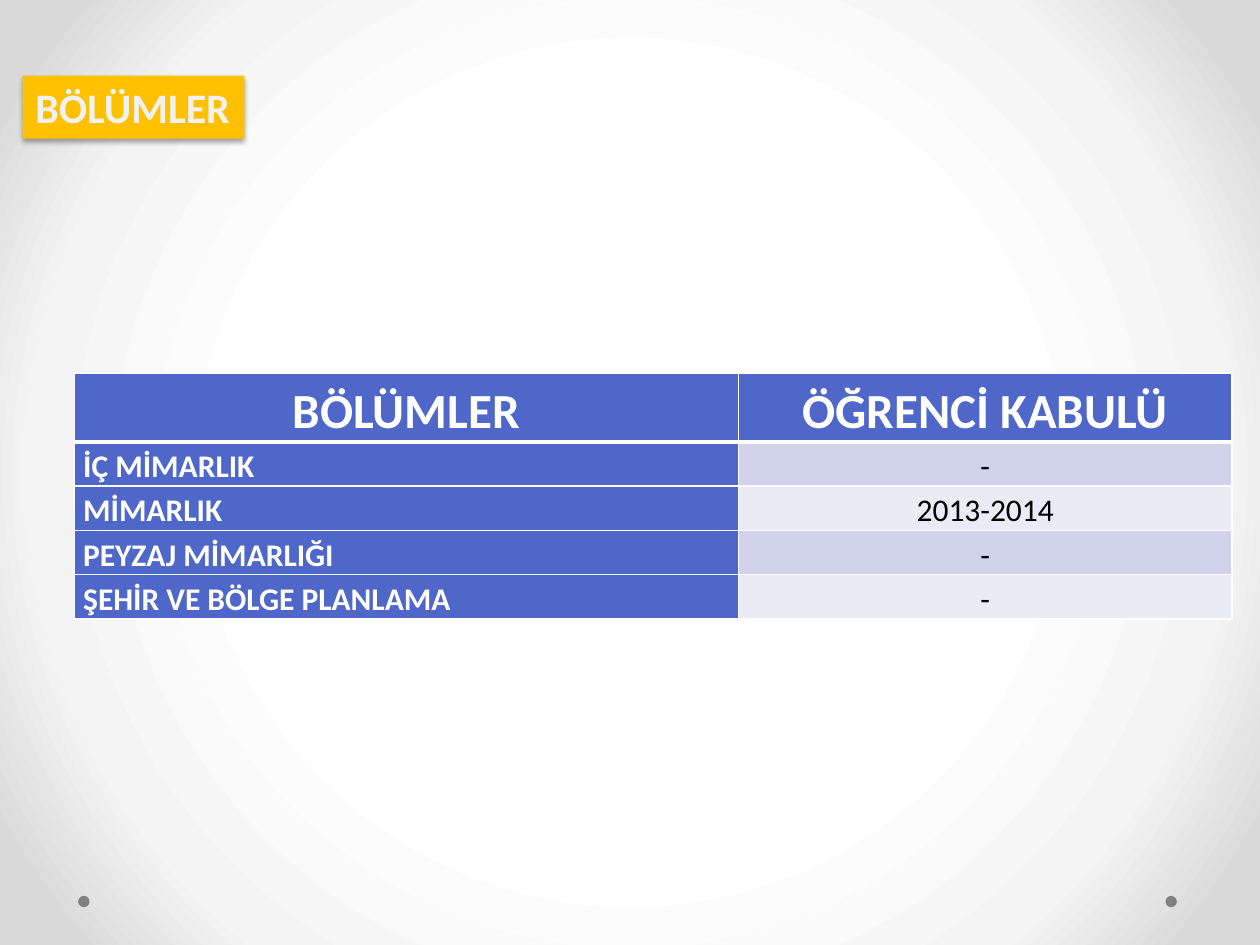
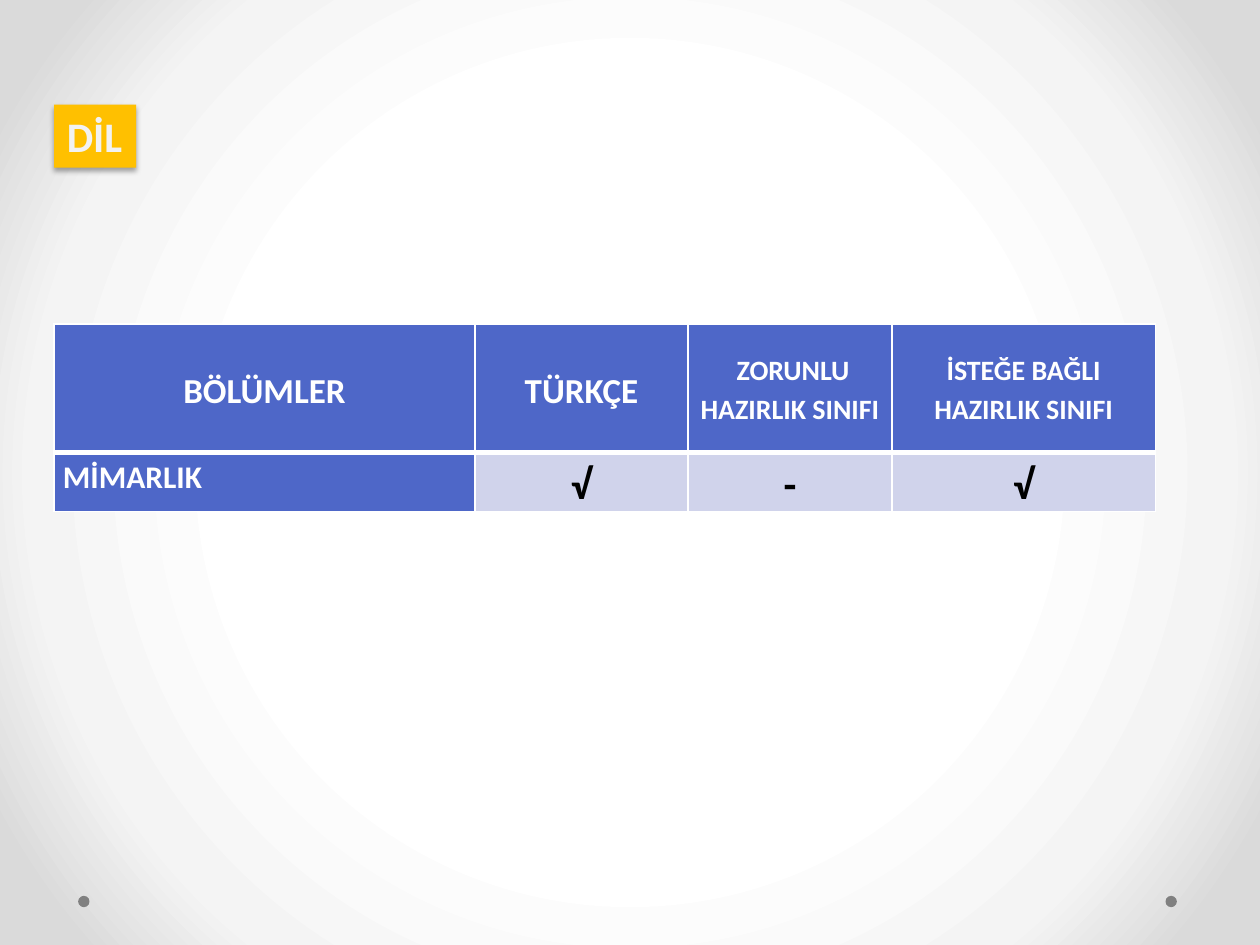
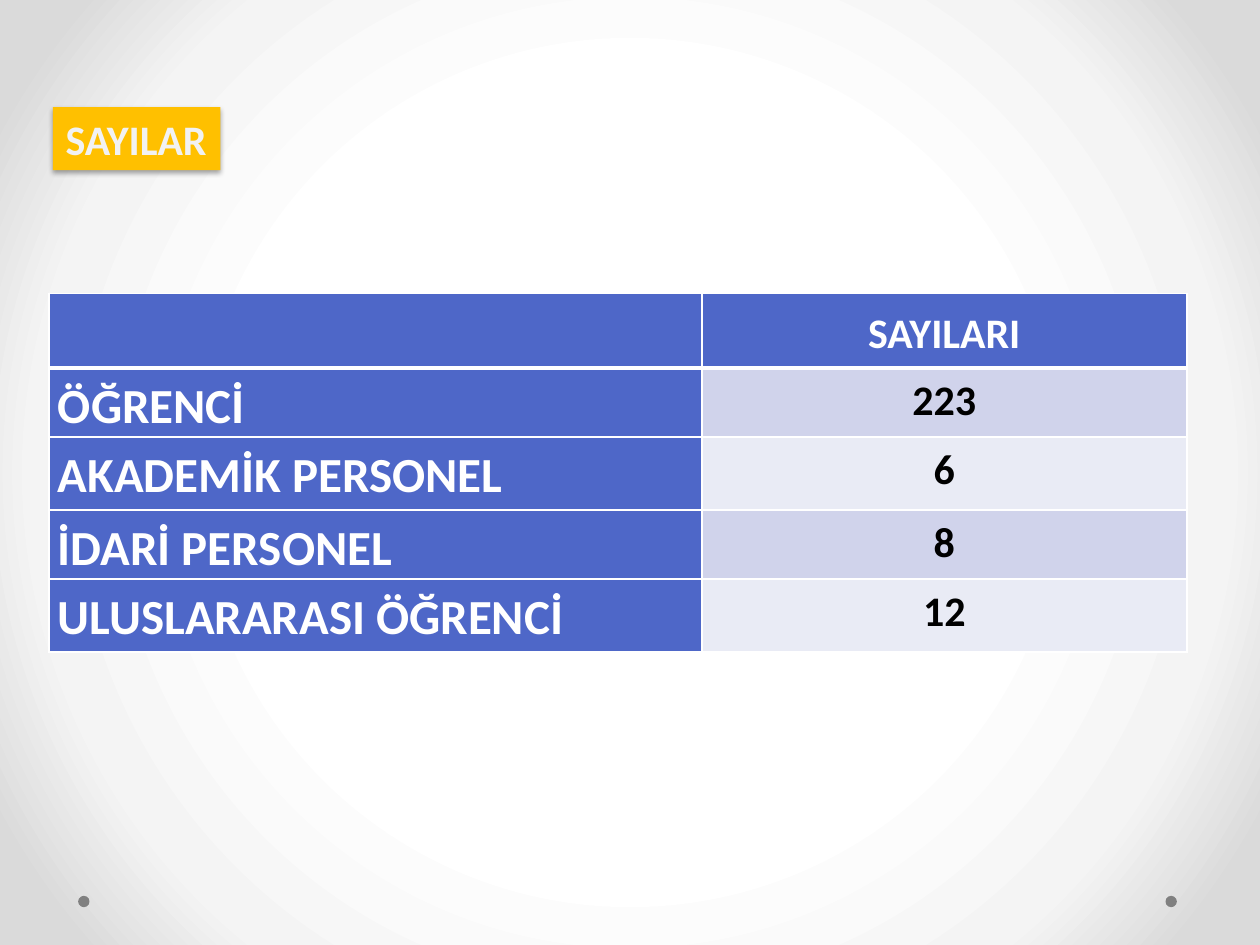
"""Builds three slides of faculty tables under yellow title tags."""
from dataclasses import dataclass

from pptx import Presentation
from pptx.dml.color import RGBColor
from pptx.enum.shapes import MSO_SHAPE
from pptx.enum.text import MSO_ANCHOR, MSO_AUTO_SIZE, PP_ALIGN
from pptx.oxml import parse_xml
from pptx.oxml.ns import nsdecls, qn
from pptx.util import Inches, Pt

OVAL = MSO_SHAPE.OVAL
TOP, MIDDLE = MSO_ANCHOR.TOP, MSO_ANCHOR.MIDDLE
FIXED_SIZE = MSO_AUTO_SIZE.NONE
LEFT, CENTER, JUSTIFY = PP_ALIGN.LEFT, PP_ALIGN.CENTER, PP_ALIGN.JUSTIFY

FONT = "Calibri"
WHITE, BLACK, BLUE = "FFFFFF", "000000", "4E67C8"
YELLOW, TAG_TEXT, DOT_GRAY = "FFC000", "F2F2F2", "808080"
BANDS = ("D0D3EB", "E9EBF5")
BACKDROP = ((50, "FFFFFF"), (76, "F4F4F4"), (92, "DADADA"))
TITLE_ONLY = 5
DOT_SIZE, DOT_TOP, DOT_LEFTS = 0.09, 7.11, (0.62, 9.25)
FIRST_DOT_ID = 20
THIN, THICK = 1, 3
CELL_FORMAT = {
    "margin_left": Inches(0.07), "margin_right": Inches(0.07),
    "margin_top": 0, "margin_bottom": 0,
}
TAG_FORMAT = {
    "word_wrap": False, "auto_size": FIXED_SIZE, "vertical_anchor": TOP,
    "margin_left": Inches(0.1), "margin_right": Inches(0.1),
    "margin_top": Inches(0.05), "margin_bottom": Inches(0.05),
}


@dataclass(frozen=True)
class Tag:
    """A title tag and its box in inches."""
    text: str
    left: float
    top: float
    width: float
    height: float = 0.5


@dataclass(frozen=True)
class Grid:
    """A table with its sizes in inches and text sizes in points."""
    left: float
    top: float
    cols: tuple[float, ...]
    heights: tuple[float, ...]
    rows: tuple[tuple[str, ...], ...]
    header_sizes: tuple[int, ...]
    label_size: int
    value_size: int
    bold_values: bool = True


PAGES = (
    (
        Tag("BÖLÜMLER", 0.18, 0.6, 1.76),
        Grid(0.59, 2.96, (5.27, 3.92), (0.52,) + (0.34,) * 4, (
            ("BÖLÜMLER", "ÖĞRENCİ KABULÜ"),
            ("İÇ MİMARLIK", "-"),
            ("MİMARLIK", "2013-2014"),
            ("PEYZAJ MİMARLIĞI", "-"),
            ("ŞEHİR VE BÖLGE PLANLAMA", "-"),
        ), (28, 28), 18, 18, False),
    ),
    (
        Tag("DİL", 0.43, 0.83, 0.65),
        Grid(0.43, 2.57, (3.34, 1.69, 1.62, 2.09), (1.02, 0.47), (
            ("BÖLÜMLER", "TÜRKÇE", " ZORUNLU HAZIRLIK SINIFI",
             "İSTEĞE BAĞLI HAZIRLIK SINIFI"),
            ("MİMARLIK", "√", "-", "√"),
        ), (20, 20, 16, 16), 18, 24),
    ),
    (
        Tag("SAYILAR", 0.42, 0.85, 1.33),
        Grid(0.39, 2.33, (5.18, 3.85), (0.59, 0.54, 0.58, 0.54, 0.58), (
            ("", "SAYILARI"),
            ("ÖĞRENCİ", "223"),
            ("AKADEMİK PERSONEL", "6"),
            ("İDARİ PERSONEL", "8"),
            ("ULUSLARARASI ÖĞRENCİ", "12"),
        ), (24, 24), 28, 24),
    ),
)


def rgb(color: str) -> RGBColor:
    """Turn a hex string into a colour."""
    return RGBColor.from_string(color)


def apply(target, values: dict) -> None:
    """Set each named attribute on the target."""
    for name, value in values.items():
        setattr(target, name, value)


def fill_solid(item, color: str) -> None:
    """Fill a shape or cell with one colour."""
    item.fill.solid()
    item.fill.fore_color.rgb = rgb(color)


def write(tf, text: str, size: int, color: str, bold: bool, align, spacing: float) -> None:
    """Write one formatted paragraph into a text frame."""
    p = tf.paragraphs[0]
    apply(p, {"alignment": align, "line_spacing": spacing})
    if text:
        r = p.add_run()
        r.text = text
        apply(r.font, {"name": FONT, "size": Pt(size), "bold": bold})
        r.font.color.rgb = rgb(color)


def set_backdrop(master) -> None:
    """Give the master its radial gradient background."""
    stops = "".join(
        f'<a:gs pos="{pos * 1000}"><a:srgbClr val="{color}"/></a:gs>'
        for pos, color in BACKDROP
    )
    c_sld = master.element.cSld
    old = c_sld.find(qn("p:bg"))
    if old is not None:
        c_sld.remove(old)
    c_sld.insert(0, parse_xml(
        f'<p:bg {nsdecls("p", "a")}><p:bgPr><a:gradFill rotWithShape="1">'
        f'<a:gsLst>{stops}</a:gsLst><a:path path="circle">'
        '<a:fillToRect l="50000" t="50000" r="50000" b="50000"/></a:path>'
        '</a:gradFill><a:effectLst/></p:bgPr></p:bg>'
    ))


def add_master_dots(master, s) -> None:
    """Draw the footer dots and hand them over to the master."""
    for number, left in enumerate(DOT_LEFTS, FIRST_DOT_ID):
        dot = s.shapes.add_shape(
            OVAL, Inches(left), Inches(DOT_TOP), Inches(DOT_SIZE), Inches(DOT_SIZE))
        dot.shadow.inherit = False
        fill_solid(dot, DOT_GRAY)
        dot.line.fill.background()
        dot.element.nvSpPr.cNvPr.id = number
        master.element.cSld.spTree.append(dot.element)


def add_tag(s, tag: Tag) -> None:
    """Turn the title placeholder into a shadowed yellow tag."""
    sp = s.shapes.title
    apply(sp, {name: Inches(getattr(tag, name))
               for name in ("left", "top", "width", "height")})
    fill_solid(sp, YELLOW)
    sp.shadow.inherit = False
    sp.element.spPr.find(qn("a:effectLst")).append(parse_xml(
        f'<a:outerShdw {nsdecls("a")} blurRad="{Pt(3.1)}" dist="{Pt(1.8)}" '
        'dir="5400000" rotWithShape="0"><a:srgbClr val="000000">'
        '<a:alpha val="35000"/></a:srgbClr></a:outerShdw>'
    ))
    apply(sp.text_frame, TAG_FORMAT)
    write(sp.text_frame, tag.text, 24, TAG_TEXT, True, LEFT, 1.0)


def set_borders(cell, top: int, bottom: int) -> None:
    """Draw white borders around a cell."""
    widths = {"lnL": THIN, "lnR": THIN, "lnT": top, "lnB": bottom}
    for side, width in widths.items():
        cell._tc.get_or_add_tcPr().append(parse_xml(
            f'<a:{side} {nsdecls("a")} w="{Pt(width)}"><a:solidFill>'
            f'<a:srgbClr val="{WHITE}"/></a:solidFill></a:{side}>'
        ))


def add_grid(s, grid: Grid) -> None:
    """Draw a table with a blue header row and label column."""
    table = s.shapes.add_table(
        len(grid.rows), len(grid.cols), Inches(grid.left), Inches(grid.top),
        Inches(sum(grid.cols)), Inches(sum(grid.heights))).table
    for col, width in zip(table.columns, grid.cols):
        col.width = Inches(width)
    for row, height in zip(table.rows, grid.heights):
        row.height = Inches(height)
    for i, texts in enumerate(grid.rows):
        for j, text in enumerate(texts):
            cell = table.cell(i, j)
            set_borders(cell, THICK if i == 1 else THIN, THICK if i == 0 else THIN)
            apply(cell, CELL_FORMAT)
            cell.vertical_anchor = TOP if i else MIDDLE
            if i == 0:
                fill, style = BLUE, (grid.header_sizes[j], WHITE, True, CENTER)
            elif j == 0:
                fill, style = BLUE, (grid.label_size, WHITE, True, JUSTIFY)
            else:
                fill = BANDS[(i - 1) % 2]
                style = (grid.value_size, BLACK, grid.bold_values, CENTER)
            fill_solid(cell, fill)
            write(cell.text_frame, text, *style, 1.15)


def main() -> None:
    """Build and save the presentation."""
    prs = Presentation()
    prs.slide_width, prs.slide_height = Inches(10), Inches(7.5)
    set_backdrop(prs.slide_master)
    for tag, grid in PAGES:
        s = prs.slides.add_slide(prs.slide_layouts[TITLE_ONLY])
        add_tag(s, tag)
        add_grid(s, grid)
    add_master_dots(prs.slide_master, prs.slides[0])
    prs.save("out.pptx")


if __name__ == "__main__":
    main()
